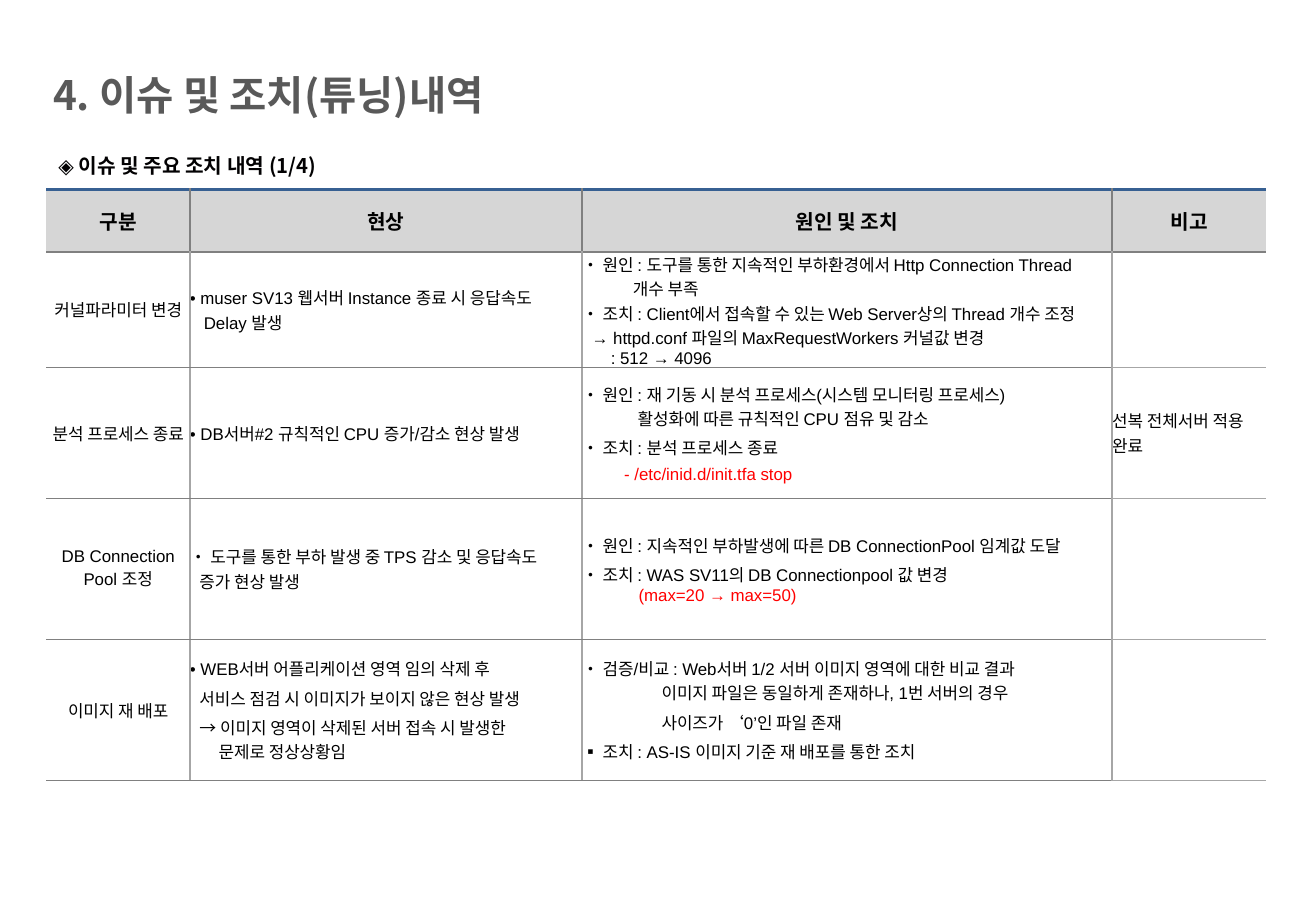
from dataclasses import dataclass

from lxml.etree import SubElement
from pptx import Presentation
from pptx.dml.color import RGBColor as RGB
from pptx.enum.text import MSO_ANCHOR as ANCHOR, PP_ALIGN as ALIGN
from pptx.oxml.ns import qn
from pptx.util import Cm, Pt


@dataclass(frozen=True)
class Theme:
    head_font: str = "Noto Sans CJK KR"
    body_font: str = "Arial"
    title_size: int = 24
    head_size: int = 12
    body_size: int = 10
    title: str = "595959"
    subtitle: str = "020102"
    text: str = "000000"
    accent: str = "FF0000"
    head_fill: str = "D6D6D6"
    top_rule: str = "376092"
    rule: str = "808080"
    light_rule: str = "A6A6A6"


T = Theme()


def set_font(p, name, size, color, bold=False):
    p.font.name, p.font.size, p.font.bold = name, Pt(size), bold
    p.font.color.rgb = RGB.from_string(color)


def add_border(cell, side, color, width=1):
    ln = SubElement(cell._tc.get_or_add_tcPr(), qn(f"a:ln{side}"), w=str(Pt(width)))
    if color:
        fill = SubElement(ln, qn("a:solidFill"))
        SubElement(fill, qn("a:srgbClr"), val=color)
    else:
        SubElement(ln, qn("a:noFill"))


prs = Presentation()
prs.slide_width, prs.slide_height = Cm(27.51), Cm(19.05)
s = prs.slides.add_slide(prs.slide_layouts[6])

# Title and subtitle
headings = [
    ("4. 이슈 및 조치(튜닝)내역", 0.86, 1.34, 20.47, 1.5, T.title_size, T.title, 1.0),
    ("◈ 이슈 및 주요 조치 내역 (1/4)", 0.97, 2.82, 25.1, 1.02, T.head_size, T.subtitle, 1.5),
]
for text, x, y, w, h, size, color, spacing in headings:
    tf = s.shapes.add_textbox(Cm(x), Cm(y), Cm(w), Cm(h)).text_frame
    tf.word_wrap = True
    p = tf.paragraphs[0]
    p.text, p.line_spacing = text, spacing
    set_font(p, T.head_font, size, color, bold=True)

# Table content; a paragraph is (text, first-line cm, other-lines cm, accent text)
header = ["구분", "현상", "원인 및 조치", "비고"]
issues = [
    ("커널파라미터 변경", 0,
     [("• muser SV13 웹서버 Instance 종료 시 응답속도\vDelay 발생", 0, 0.29, "")],
     [("• 원인 : 도구를 통한 지속적인 부하환경에서 Http Connection Thread\v개수 부족", 0, 1.06, ""),
      ("• 조치 : Client에서 접속할 수 있는 Web Server상의 Thread 개수 조정", 0, 0, ""),
      ("→ httpd.conf 파일의 MaxRequestWorkers 커널값 변경", 0.2, 0.2, ""),
      (": 512 → 4096", 0.6, 0.6, "")],
     ""),
    ("분석 프로세스 종료", 3,
     [("• DB서버#2 규칙적인 CPU 증가/감소 현상 발생", 0, 0, "")],
     [("• 원인 : 재 기동 시 분석 프로세스(시스템 모니터링 프로세스)\v"
       "활성화에 따른 규칙적인 CPU 점유 및 감소", 0, 1.16, ""),
      ("• 조치 : 분석 프로세스 종료", 0, 0, ""),
      ("", 0.88, 0.88, "- /etc/inid.d/init.tfa stop")],
     "선복 전체서버 적용 완료"),
    ("DB Connection Pool 조정", 3,
     [("• 도구를 통한 부하 발생 중 TPS 감소 및 응답속도\v증가 현상 발생", 0, 0.2, "")],
     [("• 원인 : 지속적인 부하발생에 따른 DB ConnectionPool 임계값 도달", 0, 0, ""),
      ("• 조치 : WAS SV11의 DB Connectionpool 값 변경\v", 0, 1.18, "(max=20 → max=50)")],
     ""),
    ("이미지 재 배포", 3,
     [("• WEB서버 어플리케이션 영역 임의 삭제 후", 0, 0.2, ""),
      ("서비스 점검 시 이미지가 보이지 않은 현상 발생", 0.2, 0.2, ""),
      ("→ 이미지 영역이 삭제된 서버 접속 시 발생한\v문제로 정상상황임", 0.2, 0.6, "")],
     [("• 검증/비교 : Web서버 1/2 서버 이미지 영역에 대한 비교 결과\v"
       "이미지 파일은 동일하게 존재하나, 1번 서버의 경우", 0, 1.66, ""),
      ("사이즈가 ‘0’인 파일 존재", 1.66, 1.66, ""),
      ("▪ 조치 : AS-IS 이미지 기준 재 배포를 통한 조치", 0, 0, "")],
     ""),
]
rows = [(0, [[(name, 0, 0, "")] for name in header])]
for category, gap, symptom, action, note in issues:
    rows.append((gap, [[(category, 0, 0, "")], symptom, action, [(note, 0, 0, "")]]))

# Table grid
col_widths = [3.0, 8.2, 11.08, 3.22]
row_heights = [1.3, 2.41, 2.74, 2.95, 2.95]
table = s.shapes.add_table(len(rows), len(header), Cm(0.97), Cm(3.97),
                           Cm(sum(col_widths)), Cm(sum(row_heights))).table
table.horz_banding = False
for col, width in zip(table.columns, col_widths):
    col.width = Cm(width)
for row, height in zip(table.rows, row_heights):
    row.height = Cm(height)

# Table cells
last = len(header) - 1
for i, (gap, cells) in enumerate(rows):
    for j, paragraphs in enumerate(cells):
        cell = table.cell(i, j)
        cell.margin_left = cell.margin_right = cell.margin_top = cell.margin_bottom = 0
        cell.vertical_anchor = ANCHOR.MIDDLE

        side = T.light_rule if i else T.rule
        above = T.light_rule if j == last and i > 1 else T.rule
        below = T.light_rule if j == last and i else T.rule
        add_border(cell, "L", side if j else None)
        add_border(cell, "R", side if j < last else None)
        add_border(cell, "T", above if i else T.top_rule, 1 if i else 2.25)
        add_border(cell, "B", below)
        if i:
            cell.fill.background()
        else:
            cell.fill.solid()
            cell.fill.fore_color.rgb = RGB.from_string(T.head_fill)

        tf = cell.text_frame
        for k, (text, first, left, accent) in enumerate(paragraphs):
            p = tf.add_paragraph() if k else tf.paragraphs[0]
            p.text = text
            p.alignment = ALIGN.CENTER if i == 0 or j == 0 else ALIGN.LEFT
            if k and gap:
                p.space_before = Pt(gap)
            if left:
                pPr = p._p.get_or_add_pPr()
                pPr.set("marL", str(Cm(left)))
                pPr.set("indent", str(Cm(first) - Cm(left)))
            if i:
                set_font(p, T.body_font, T.body_size, T.text)
            else:
                set_font(p, T.head_font, T.head_size, T.text, bold=True)
            if accent:
                r = p.add_run()
                r.text = accent
                r.font.color.rgb = RGB.from_string(T.accent)

prs.save("out.pptx")
